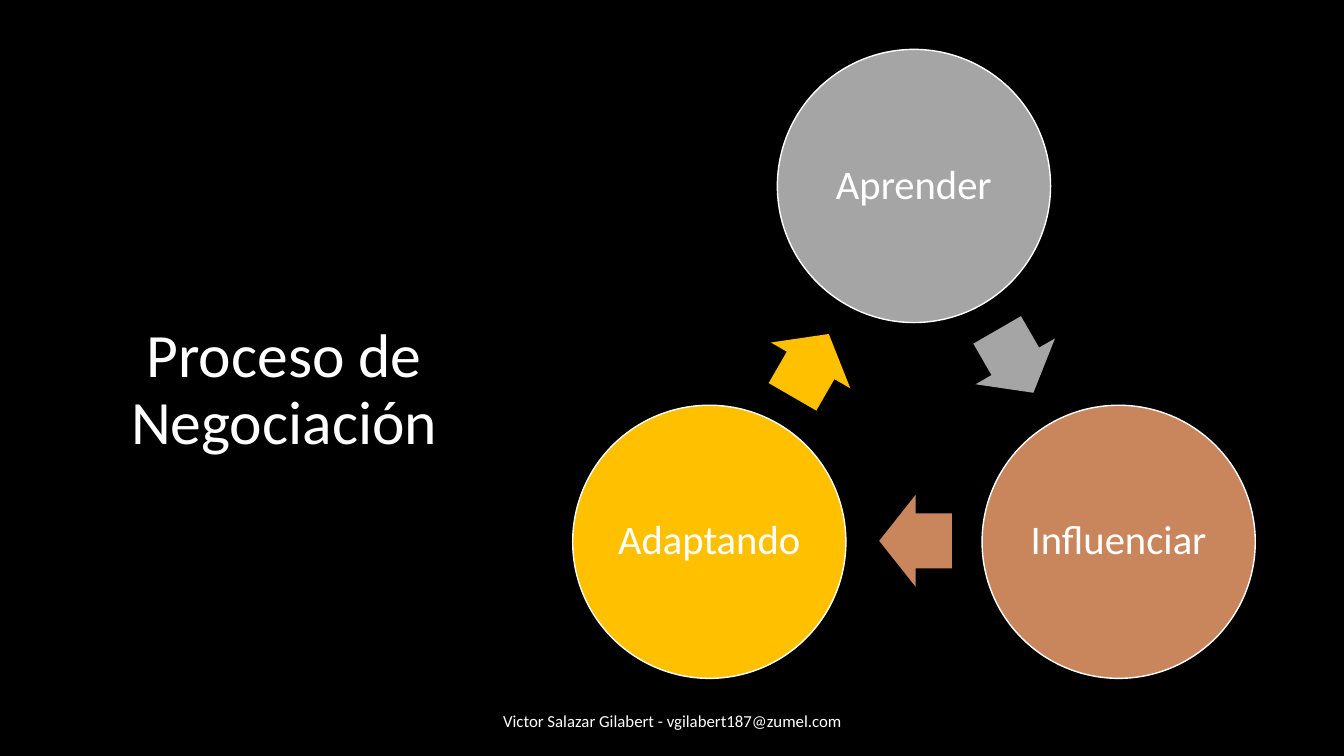
from dataclasses import dataclass

from pptx import Presentation
from pptx.dml.color import RGBColor
from pptx.enum.shapes import MSO_SHAPE
from pptx.enum.text import MSO_ANCHOR, PP_ALIGN
from pptx.util import Emu, Pt

PX = 9144  # 100 px to the inch
TITLE_ONLY = 5
CENTER = PP_ALIGN.CENTER
MIDDLE = MSO_ANCHOR.MIDDLE
ELLIPSE = MSO_SHAPE.OVAL
ARROW = MSO_SHAPE.RIGHT_ARROW

FONT = "Calibri"
WHITE = "FFFFFF"
CIRCLE_SIZE = 271
ARROW_WIDTH, ARROW_HEIGHT = 72, 91
INSET = 4


@dataclass(frozen=True)
class Stage:
    """One circle of the cycle and the arrow leading to the next one."""
    label: str
    color: str
    left: int
    top: int
    arrow_left: int
    arrow_top: int
    arrow_rotation: int


STAGES = [
    Stage("Aprender", "A5A5A5", 771, 49, 971, 313, 60),
    Stage("Influenciar", "C9865C", 974, 402, 872, 491, 180),
    Stage("Adaptando", "FFC000", 568, 402, 768, 317, 300),
]


def px(length: int) -> Emu:
    return Emu(length * PX)


def rgb(color: str) -> RGBColor:
    return RGBColor.from_string(color)


def write(shape, text: str, size: int, spacing: float = 1.0) -> None:
    frame = shape.text_frame
    frame.text = text
    frame.word_wrap = True
    frame.vertical_anchor = MIDDLE
    para = frame.paragraphs[0]
    para.alignment = CENTER
    para.line_spacing = spacing
    font = para.runs[0].font
    font.name = FONT
    font.size = Pt(size)
    font.color.rgb = rgb(WHITE)


def add_filled(slide, kind, left: int, top: int, width: int, height: int, color: str):
    shape = slide.shapes.add_shape(kind, px(left), px(top), px(width), px(height))
    shape.shadow.inherit = False
    shape.fill.solid()
    shape.fill.fore_color.rgb = rgb(color)
    shape.line.fill.background()
    return shape


def add_stage(slide, stage: Stage) -> None:
    circle = add_filled(slide, ELLIPSE, stage.left, stage.top,
                        CIRCLE_SIZE, CIRCLE_SIZE, stage.color)
    circle.line.color.rgb = rgb(WHITE)
    circle.line.width = Pt(1)
    frame = circle.text_frame
    frame.margin_left = frame.margin_right = px(INSET)
    frame.margin_top = frame.margin_bottom = px(INSET)
    write(circle, stage.label, 29, 0.9)

    arrow = add_filled(slide, ARROW, stage.arrow_left, stage.arrow_top,
                       ARROW_WIDTH, ARROW_HEIGHT, stage.color)
    arrow.adjustments[0] = 0.6
    arrow.adjustments[1] = 0.5
    arrow.rotation = stage.arrow_rotation


def main() -> None:
    deck = Presentation()
    deck.slide_width, deck.slide_height = px(1333), px(750)
    slide = deck.slides.add_slide(deck.slide_layouts[TITLE_ONLY])
    slide.background.fill.solid()
    slide.background.fill.fore_color.rgb = rgb("000000")

    title = slide.shapes.title
    title.left, title.top = px(14), px(163)
    title.width, title.height = px(536), px(450)
    write(title, "Proceso de Negociación", 44, 0.9)

    for stage in STAGES:
        add_stage(slide, stage)

    footer = slide.shapes.add_textbox(px(442), px(695), px(450), px(40))
    write(footer, "Victor Salazar Gilabert - vgilabert187@zumel.com", 12)

    deck.save("out.pptx")


if __name__ == "__main__":
    main()
